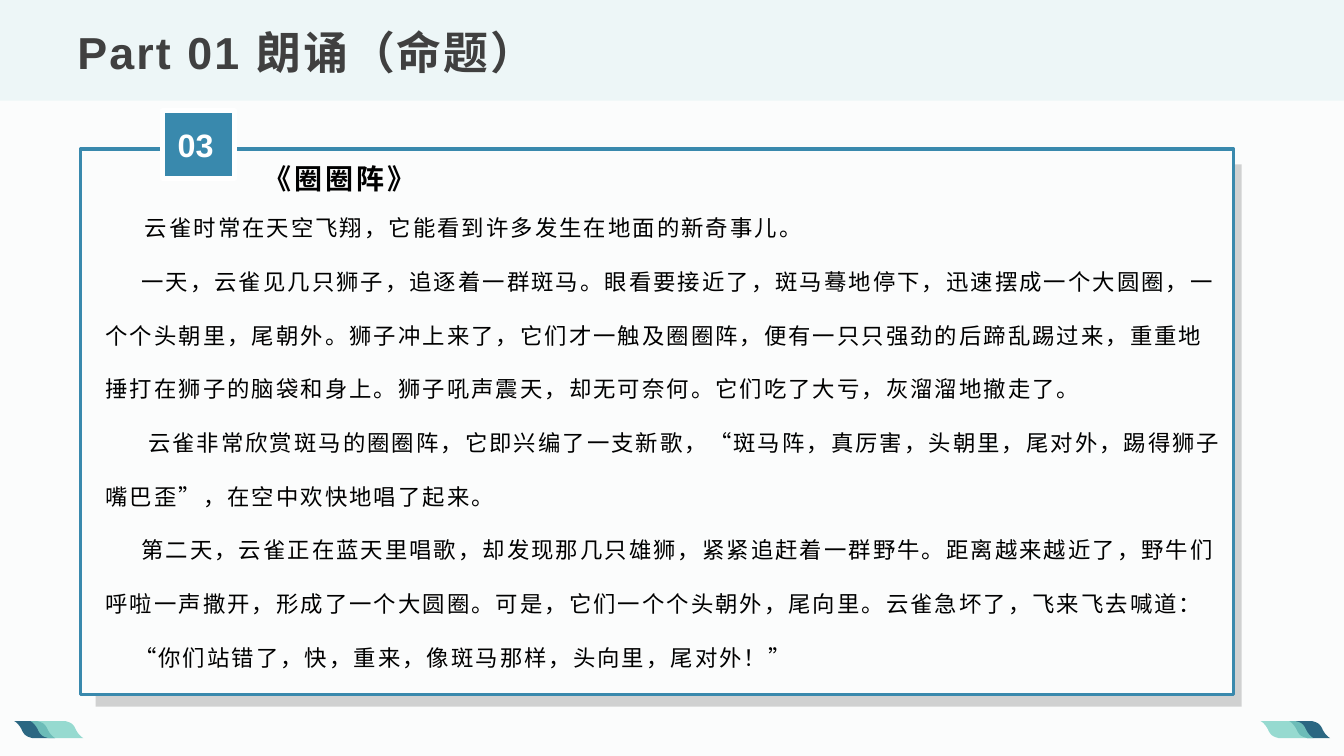
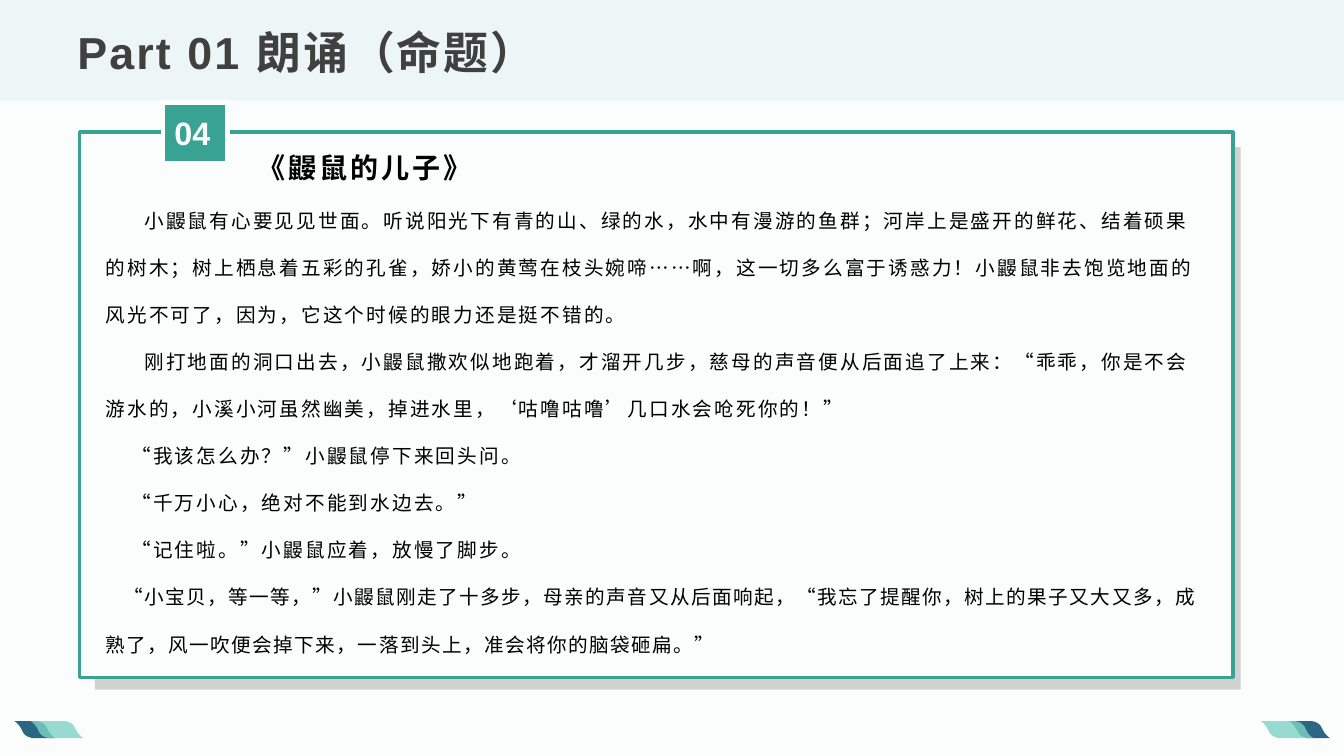
from pptx import Presentation
from pptx.dml.color import RGBColor
from pptx.enum.shapes import MSO_SHAPE as Preset
from pptx.enum.text import MSO_ANCHOR as Anchor, MSO_AUTO_SIZE as AutoSize, PP_ALIGN as Align
from pptx.oxml.ns import qn
from pptx.util import Cm, Pt
from lxml.etree import SubElement

# Content: each paragraph is (first-line indent in cm, letter spacing in pt, text)
TITLE = "Part 01 朗诵（命题）"
STORIES = [
    {
        "number": "03", "heading": "《圈圈阵》", "accent": "3989AD", "size": 16,
        "frame": (2.03, 3.76), "badge": (4.09, 2.79, 1.83, 1.7),
        "heading_box": (5.94, 3.56, 11.43, 1.35), "story_box": (2.41, 4.72, 28.7, 12.22),
        "paragraphs": [
            (0.99, 1.5, "云雀时常在天空飞翔，它能看到许多发生在地面的新奇事儿。"),
            (0.9, 1.5, "一天，云雀见几只狮子，追逐着一群斑马。眼看要接近了，斑马蓦地停下，"
                       "迅速摆成一个大圆圈，一个个头朝里，尾朝外。狮子冲上来了，它们才一触及圈圈阵，"
                       "便有一只只强劲的后蹄乱踢过来，重重地捶打在狮子的脑袋和身上。"
                       "狮子吼声震天，却无可奈何。它们吃了大亏，灰溜溜地撤走了。"),
            (1.07, 1.5, "云雀非常欣赏斑马的圈圈阵，它即兴编了一支新歌，“斑马阵，真厉害，"
                        "头朝里，尾对外，踢得狮子嘴巴歪”，在空中欢快地唱了起来。"),
            (0.9, 1.5, "第二天，云雀正在蓝天里唱歌，却发现那几只雄狮，紧紧追赶着一群野牛。"
                       "距离越来越近了，野牛们呼啦一声撒开，形成了一个大圆圈。"
                       "可是，它们一个个头朝外，尾向里。云雀急坏了，飞来飞去喊道："),
            (0.72, 1.5, "“你们站错了，快，重来，像斑马那样，头向里，尾对外！”"),
        ],
    },
    {
        "number": "04", "heading": "《鼹鼠的儿子》", "accent": "38A293", "size": 14,
        "frame": (2.01, 3.33), "badge": (4.11, 2.59, 1.63, 1.52),
        "heading_box": (5.79, 3.33, 11.43, 1.3), "story_box": (2.41, 4.67, 28.22, 12.24),
        "paragraphs": [
            (0.98, 1.5, "小鼹鼠有心要见见世面。听说阳光下有青的山、绿的水，水中有漫游的鱼群；"
                        "河岸上是盛开的鲜花、结着硕果的树木；树上栖息着五彩的孔雀，"
                        "娇小的黄莺在枝头婉啼……啊，这一切多么富于诱惑力！"
                        "小鼹鼠非去饱览地面的风光不可了，因为，它这个时候的眼力还是挺不错的。"),
            (0.98, 1.5, "刚打地面的洞口出去，小鼹鼠撒欢似地跑着，才溜开几步，"
                        "慈母的声音便从后面追了上来：“乖乖，你是不会游水的，小溪小河虽然幽美，"
                        "掉进水里，‘咕噜咕噜’几口水会呛死你的！”"),
            (0.65, 1.5, "“我该怎么办？”小鼹鼠停下来回头问。"),
            (0.65, 1.5, "“千万小心，绝对不能到水边去。”"),
            (0.65, 1.5, "“记住啦。”小鼹鼠应着，放慢了脚步。"),
            (0.44, 1, "“小宝贝，等一等，”小鼹鼠刚走了十多步，母亲的声音又从后面响起，"
                      "“我忘了提醒你，树上的果子又大又多，成熟了，风一吹便会掉下来，"
                      "一落到头上，准会将你的脑袋砸扁。”"),
        ],
    },
]

# Shared style, lengths in cm
LATIN, HAN = "Arial", "Noto Sans CJK SC"
PAPER, BAND, SHADE, WHITE, BLACK, TITLE_GREY = (
    "FBFCFC", "EDF6F7", "BFBFBF", "FFFFFF", "000000", "404040")
DARK_RIBBON, LIGHT_RIBBON = "2B6782", "7DD2C6"
SLIDE_W, SLIDE_H = 33.87, 19.05
FRAME_SIZE, SHADE_SIZE, SHADE_OFFSET = (29.06, 13.74), (28.88, 13.67), 0.38
TITLE_BOX = (1.7, 0.43, 30.48, 1.7)

# Ribbon ornaments: left edges of the dark and light ribbons in each corner
CORNERS = [(0.36, 0.77), (32.49, 31.77)]
RIBBON_TOP, RIBBON_H, SLANT = 18.17, 0.43, 0.46
DARK_W, LIGHT_W = 1.03, 1.33
LEFT_EDGE = [[(0, 0), (0, 0), (0.1, 0.05), (0.18, 0.2)],
             [(0.18, 0.2), (0.25, 0.36), (0.3, 0.39), (SLANT, RIBBON_H)]]


def rgb(code):
    return RGBColor.from_string(code)


def paint(shape, color, alpha=None, line=None):
    """Fill a shape, with optional opacity in percent and (colour, width) line."""
    shape.shadow.inherit = False
    shape.fill.solid()
    shape.fill.fore_color.rgb = rgb(color)
    if alpha:
        tone = shape.element.spPr.find(qn("a:solidFill"))[0]
        SubElement(tone, qn("a:alpha"), val=str(alpha * 1000))
    if line:
        shape.line.color.rgb, shape.line.width = rgb(line[0]), Pt(line[1])
    else:
        shape.line.fill.background()


def add_box(slide, box, color, **style):
    shape = slide.shapes.add_shape(Preset.RECTANGLE, *map(Cm, box))
    paint(shape, color, **style)
    return shape


def place(shape, box):
    """Set a placeholder's position and bring it to the front."""
    shape.left, shape.top, shape.width, shape.height = map(Cm, box)
    shape.element.getparent().append(shape.element)


def set_frame(frame, anchor, insets):
    frame.word_wrap, frame.auto_size = True, AutoSize.NONE
    frame.vertical_anchor = anchor
    (frame.margin_left, frame.margin_top,
     frame.margin_right, frame.margin_bottom) = map(Cm, insets)


def write(paragraph, text, size, color, bold=False, font=HAN, tracking=0,
          spacing=1, indent=0, align=Align.LEFT):
    paragraph.alignment, paragraph.line_spacing = align, spacing
    paragraph.space_before = paragraph.space_after = Pt(0)
    props = paragraph._p.get_or_add_pPr()
    props.set("marL", "0")
    props.set("indent", str(Cm(indent)))
    SubElement(props, qn("a:buNone"))
    run = paragraph.add_run()
    run.text = text
    run.font.size, run.font.bold, run.font.name = Pt(size), bold, font
    run.font.color.rgb = rgb(color)
    run_props = run._r.get_or_add_rPr()
    run_props.set("lang", "zh-CN")
    run_props.set("spc", str(int(tracking * 100)))
    SubElement(run_props, qn("a:ea"), typeface=HAN)


def bezier(points, steps=8):
    for step in range(1, steps + 1):
        t = step / steps
        weights = ((1 - t) ** 3, 3 * t * (1 - t) ** 2, 3 * t * t * (1 - t), t ** 3)
        yield tuple(sum(w * p[axis] for w, p in zip(weights, points)) for axis in (0, 1))


def add_ribbon(group, left, width, color, alpha=None):
    """Draw a slanted ribbon whose right edge is its left edge turned half round."""
    edge = [(0, 0)] + [point for curve in LEFT_EDGE for point in bezier(curve)]
    outline = edge + [(width - x, RIBBON_H - y) for x, y in edge]
    start, *rest = [(Cm(left + x), Cm(RIBBON_TOP + y)) for x, y in outline]
    builder = group.shapes.build_freeform(*start, scale=1.0)
    builder.add_line_segments(rest, close=True)
    paint(builder.convert_to_shape(), color, alpha)


def add_backdrop(slide):
    """Background, title band, corner ribbons and title."""
    slide.background.fill.solid()
    slide.background.fill.fore_color.rgb = rgb(PAPER)
    add_box(slide, (0, 0, SLIDE_W, 2.54), BAND)
    for dark_left, light_left in CORNERS:
        group = slide.shapes.add_group_shape()
        add_ribbon(group, dark_left, DARK_W, DARK_RIBBON)
        add_ribbon(group, light_left, LIGHT_W, LIGHT_RIBBON, alpha=80)
    title = slide.shapes.title
    place(title, TITLE_BOX)
    set_frame(title.text_frame, Anchor.BOTTOM, (0.25, 0.13, 0.25, 0.13))
    write(title.text_frame.paragraphs[0], TITLE, 32, TITLE_GREY, bold=True,
          font=LATIN, tracking=1.5, spacing=0.9)


def add_story(slide, story):
    # Framed panel with its offset shade
    left, top = story["frame"]
    add_box(slide, (left + SHADE_OFFSET, top + SHADE_OFFSET, *SHADE_SIZE), SHADE, alpha=70)
    add_box(slide, (left, top, *FRAME_SIZE), PAPER, line=(story["accent"], 2.5))

    # Number badge
    badge = add_box(slide, story["badge"], story["accent"], line=(WHITE, 3.5))
    set_frame(badge.text_frame, Anchor.MIDDLE, (0, 0, 0.15, 0))
    write(badge.text_frame.paragraphs[0], story["number"], 23.1, WHITE, bold=True,
          font=LATIN, align=Align.CENTER)

    # Story text
    body = slide.placeholders[1]
    place(body, story["story_box"])
    frame = body.text_frame
    set_frame(frame, Anchor.TOP, (0.25, 0, 0.25, 0.13))
    for index, (indent, tracking, text) in enumerate(story["paragraphs"]):
        paragraph = frame.add_paragraph() if index else frame.paragraphs[0]
        write(paragraph, text, story["size"], BLACK, tracking=tracking,
              spacing=2.0, indent=indent)

    # Story heading
    heading = slide.shapes.add_textbox(*map(Cm, story["heading_box"])).text_frame
    set_frame(heading, Anchor.BOTTOM, (0.25, 0.13, 0.25, 0))
    write(heading.paragraphs[0], story["heading"], 20, BLACK, bold=True,
          tracking=2, spacing=1.2, indent=0.46)


def main():
    deck = Presentation()
    deck.slide_width, deck.slide_height = Cm(SLIDE_W), Cm(SLIDE_H)
    for story in STORIES:
        slide = deck.slides.add_slide(deck.slide_layouts[1])
        add_backdrop(slide)
        add_story(slide, story)
    deck.save("out.pptx")


if __name__ == "__main__":
    main()
